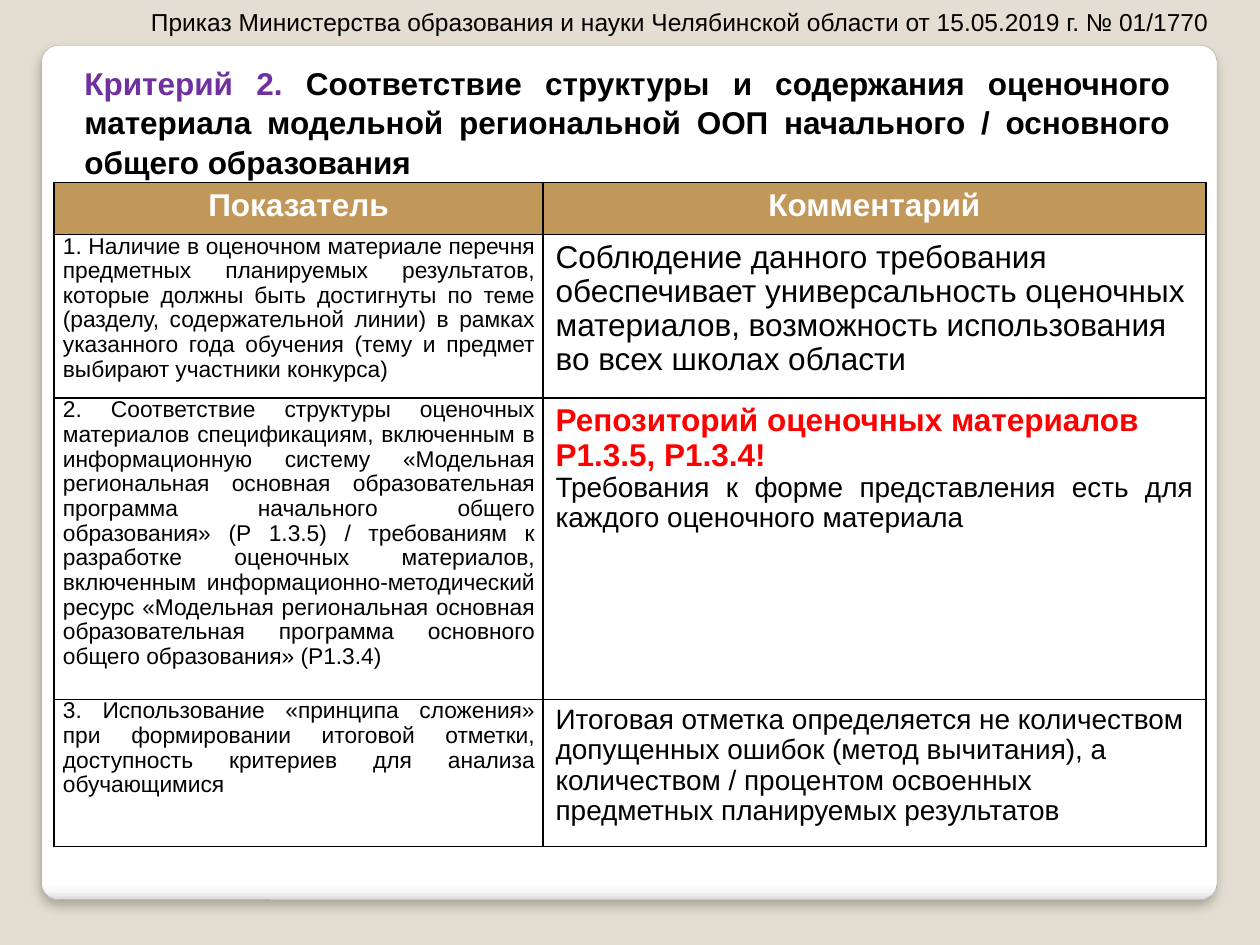
from dataclasses import dataclass

from lxml import etree
from pptx import Presentation, util as u
from pptx.dml.color import RGBColor
from pptx.enum import shapes, text
from pptx.oxml import ns, parse_xml

LEFT, CENTER, JUSTIFY = text.PP_ALIGN.LEFT, text.PP_ALIGN.CENTER, text.PP_ALIGN.JUSTIFY
COLUMNS, ROWS = 100, 75


@dataclass(frozen=True)
class Theme:
    """Colours, font and type sizes of the page."""
    font: str = "Arial"
    back: str = "E3DED1"
    white: str = "FFFFFF"
    ink: str = "000000"
    accent: str = "7030A0"
    alert: str = "FF0000"
    header: str = "C19859"
    edge: str = "A4A4A4"
    card_stops: tuple = ((0, "FFFFFF"), (98, "FFFFFF"), (99, "F7F7F7"), (100, "DADADA"))
    large: int = 18
    medium: int = 16
    note: int = 14
    small: int = 13


THEME = Theme()


def span(words, size=THEME.large, color=THEME.ink, bold=False):
    """Describe a run of text and its format."""
    return dict(words=words, size=size, color=color, bold=bold)


def para(*spans, align=LEFT, spacing=0.97):
    """Describe a paragraph made of spans."""
    return dict(spans=spans, align=align, spacing=spacing)


def write(frame, paras, font=THEME.font):
    """Write described paragraphs into a text frame."""
    frame.word_wrap = True
    for index, item in enumerate(paras):
        line = frame.paragraphs[0] if index == 0 else frame.add_paragraph()
        line.alignment, line.line_spacing = item["align"], item["spacing"]
        line.space_before = line.space_after = u.Pt(0)
        for part in item["spans"]:
            run = line.add_run()
            run.text = part["words"]
            run.font.name, run.font.size = font, u.Pt(part["size"])
            run.font.bold = part["bold"]
            run.font.color.rgb = RGBColor.from_string(part["color"])


def drawing(tag, body):
    """Parse one DrawingML element."""
    return parse_xml(f'<a:{tag} {ns.nsdecls("a")}>{body}</a:{tag}>')


class Page:
    """A themed slide on a grid of 100 columns by 75 rows."""

    def __init__(self, deck, theme):
        """Add a title-only slide with a plain background."""
        self.deck, self.theme = deck, theme
        self.slide = deck.slides.add_slide(deck.slide_layouts[5])
        fill = self.slide.background.fill
        fill.solid()
        fill.fore_color.rgb = RGBColor.from_string(theme.back)

    def across(self, columns):
        """Turn grid columns into a length."""
        return round(self.deck.slide_width * columns / COLUMNS)

    def down(self, rows):
        """Turn grid rows into a length."""
        return round(self.deck.slide_height * rows / ROWS)

    def area(self, left, top, width, height):
        """Turn a grid area into lengths."""
        return self.across(left), self.down(top), self.across(width), self.down(height)

    def title(self, at, *paras):
        """Place and fill the title placeholder."""
        box = self.slide.shapes.title
        box.left, box.top, box.width, box.height = self.area(*at)
        box.text_frame.auto_size = text.MSO_AUTO_SIZE.NONE
        box.text_frame.vertical_anchor = text.MSO_ANCHOR.TOP
        write(box.text_frame, paras)

    def caption(self, at, *paras):
        """Add a text box."""
        box = self.slide.shapes.add_textbox(*self.area(*at))
        write(box.text_frame, paras)

    def card(self, at):
        """Add the rounded, softly shadowed panel behind the title."""
        box = self.slide.shapes.add_shape(
            shapes.MSO_SHAPE.ROUNDED_RECTANGLE, *self.area(*at))
        box.adjustments[0] = 0.02
        box.fill.gradient()
        box.fill.gradient_angle = 270
        box.line.color.rgb = RGBColor.from_string(self.theme.edge)
        box.line.width = u.Pt(0.16)
        box.shadow.inherit = False
        stops = box.element.spPr.find(".//" + ns.qn("a:gsLst"))
        stops[:] = [etree.fromstring(
            f'<a:gs {ns.nsdecls("a")} pos="{share * 1000}"><a:srgbClr val="{color}"/></a:gs>')
            for share, color in self.theme.card_stops]
        effects = box.element.spPr.find(ns.qn("a:effectLst"))
        effects.extend(drawing("effectLst", (
            f'<a:outerShdw blurRad="{u.Pt(6)}" dist="{u.Pt(4)}" dir="5400000" '
            f'algn="t" rotWithShape="0"><a:srgbClr val="{self.theme.ink}">'
            '<a:alpha val="25000"/></a:srgbClr></a:outerShdw>')))
        self.slide.shapes.title.element.addprevious(box.element)

    def table(self, left, top, widths, heights, cells):
        """Add a bordered table with a coloured header row."""
        at = self.area(left, top, sum(widths), sum(heights))
        grid = self.slide.shapes.add_table(len(heights), len(widths), *at).table
        for column, width in zip(grid.columns, widths):
            column.width = self.across(width)
        for row, height in zip(grid.rows, heights):
            row.height = self.down(height)
        for r, line in enumerate(cells):
            for c, paras in enumerate(line):
                cell = grid.cell(r, c)
                if r and c == 0:
                    cell.margin_left = cell.margin_right = self.across(0.7)
                    cell.margin_top = cell.margin_bottom = 0
                write(cell.text_frame, paras)
                self.border(cell)
                if r:
                    cell.fill.background()
                else:
                    cell.fill.solid()
                    cell.fill.fore_color.rgb = RGBColor.from_string(self.theme.header)

    def border(self, cell):
        """Draw a thin line on each side of a cell."""
        properties = cell._tc.get_or_add_tcPr()
        for side in ("lnL", "lnR", "lnT", "lnB"):
            line = drawing(side, f'<a:solidFill><a:srgbClr val="{self.theme.ink}"/></a:solidFill>')
            line.set("w", str(u.Pt(1)))
            properties.append(line)


def heading(words):
    """Describe a header cell."""
    return [para(span(words, color=THEME.white, bold=True), align=CENTER)]


def indicator(words):
    """Describe a cell of the indicator column."""
    return [para(span(words, size=THEME.small), align=JUSTIFY)]


CELLS = [
    [heading("Показатель"), heading("Комментарий")],
    [indicator("1. Наличие в оценочном материале перечня предметных планируемых результатов, которые "
               "должны быть достигнуты по теме (разделу, содержательной линии) в рамках указанного "
               "года обучения (тему и предмет выбирают участники конкурса)"),
     [para(span("Соблюдение данного требования обеспечивает универсальность оценочных материалов, "
                "возможность использования во всех школах области"))]],
    [indicator("2. Соответствие структуры оценочных материалов спецификациям, включенным в "
               "информационную систему «Модельная региональная основная образовательная программа "
               "начального общего образования» (Р 1.3.5) / требованиям к разработке оценочных "
               "материалов, включенным информационно-методический ресурс «Модельная региональная "
               "основная образовательная программа основного общего образования» (Р1.3.4)"),
     [para(span("Репозиторий оценочных материалов Р1.3.5, Р1.3.4!", color=THEME.alert, bold=True)),
      para(span("Требования к форме представления есть для каждого оценочного материала",
                size=THEME.medium), align=JUSTIFY)]],
    [indicator("3. Использование «принципа сложения» при формировании итоговой отметки, "
               "доступность критериев для анализа обучающимися"),
     [para(span("Итоговая отметка определяется не количеством допущенных ошибок (метод вычитания), а "
                "количеством / процентом освоенных предметных планируемых результатов",
                size=THEME.medium))]],
]


def main():
    """Build and save the deck."""
    deck = Presentation()
    deck.slide_width, deck.slide_height = u.Inches(10), u.Inches(7.5)
    page = Page(deck, THEME)
    page.card((3.3, 3.6, 93.3, 67.8))
    page.title((5.7, 4.4, 88.2, 10.1), para(
        span("Критерий 2. ", color=THEME.accent, bold=True),
        span("Соответствие структуры и содержания оценочного материала модельной региональной ООП "
             "начального / основного общего образования", bold=True),
        align=JUSTIFY, spacing=1.05))
    page.table(4.3, 14.5, (38.8, 52.6), (4.1, 13, 23.9, 11.7), CELLS)
    page.caption((11, 0.1, 89, 3.4), para(
        span("Приказ Министерства образования и науки Челябинской области от 15.05.2019 г. № 01/1770",
             size=THEME.note), spacing=1.0))
    deck.save("out.pptx")


if __name__ == "__main__":
    main()
